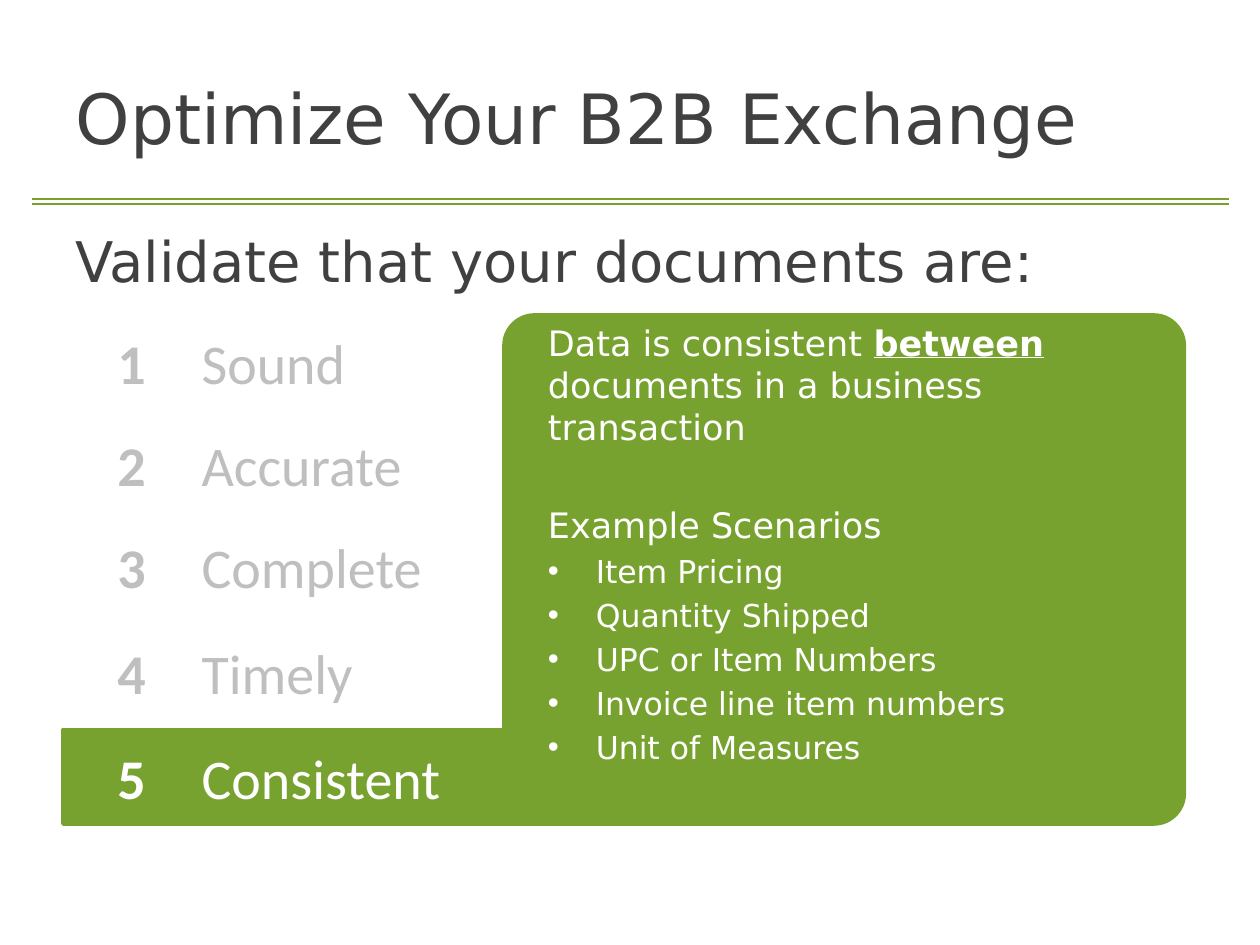
from dataclasses import dataclass
from lxml.etree import SubElement as Sub
from pptx import Presentation
from pptx.dml.color import RGBColor as RGB
from pptx.enum.shapes import MSO_CONNECTOR as Link, MSO_SHAPE as Kind
from pptx.enum.text import MSO_ANCHOR as Anchor, MSO_AUTO_SIZE as Fit, PP_ALIGN as Align
from pptx.oxml.ns import qn
from pptx.util import Inches, Pt


@dataclass(frozen=True)
class Theme:
    green: str = "78A22F"
    dark: str = "404040"
    gray: str = "BFBFBF"
    white: str = "FFFFFF"
    sans: str = "DejaVu Sans"
    label: str = "Calibri"
    title: float = 39.6
    head: int = 32
    lead: int = 20
    item: int = 18


T = Theme()
ROWS = [
    (2.5, "Sound"),
    (3.31, "Accurate"),
    (4.12, "Complete"),
    (4.96, "Timely"),
    (5.79, "Consistent"),
]
ITEMS = [
    "Item Pricing",
    "Quantity Shipped",
    "UPC or Item Numbers",
    "Invoice line item numbers",
    "Unit of Measures",
]


def place(shape, box):
    shape.left, shape.top, shape.width, shape.height = map(Inches, box)


def frame(shape, anchor=Anchor.MIDDLE, left=0.1, right=0.1):
    text = shape.text_frame
    text.word_wrap = True
    text.auto_size = Fit.NONE
    text.vertical_anchor = anchor
    text.margin_left, text.margin_right = Inches(left), Inches(right)
    text.margin_top = text.margin_bottom = Inches(0.05)
    return text


def write(para, text, size=T.head, color=T.dark, font=T.sans, bold=False,
          under=False, align=Align.LEFT, before=0):
    para.alignment = align
    para.space_before = Pt(before)
    run = para.add_run()
    run.text = text
    face = run.font
    face.name, face.size = font, Pt(size)
    face.bold, face.underline = bold, under
    face.color.rgb = RGB.from_string(color)


def bullet(para, mark=None, indent=0):
    props = para._p.get_or_add_pPr()
    props.set("marL", str(Inches(indent)))
    props.set("indent", str(-Inches(indent)))
    if mark:
        Sub(props, qn("a:buFont"), typeface="Arial")
        Sub(props, qn("a:buChar"), char=mark)
    else:
        Sub(props, qn("a:buNone"))


def block(slide, kind, box, fill=None, line=None):
    shape = slide.shapes.add_shape(kind, *map(Inches, box))
    shape.shadow.inherit = False
    if fill:
        shape.fill.solid()
        shape.fill.fore_color.rgb = RGB.from_string(fill)
    else:
        shape.fill.background()
    if line:
        shape.line.color.rgb = RGB.from_string(line)
        shape.line.width = Pt(2)
    else:
        shape.line.fill.background()
    return shape


def rule(slide, y):
    line = slide.shapes.add_connector(
        Link.STRAIGHT, Inches(0.25), Inches(y), Inches(9.75), Inches(y))
    line.line.color.rgb = RGB.from_string(T.green)
    line.line.width = Pt(1.5)
    Sub(line._element.spPr, qn("a:effectLst"))


def heads(slide):
    title, body = slide.placeholders
    place(title, (0.5, 0.3, 9, 1.25))
    write(frame(title).paragraphs[0], "Optimize Your B2B Exchange", size=T.title)
    place(body, (0.5, 1.75, 9, 1.75))
    para = frame(body, Anchor.TOP).paragraphs[0]
    write(para, "Validate that your documents are:")
    bullet(para)


def row(slide, top, name, color):
    badge = block(slide, Kind.OVAL, (0.67, top, 0.75, 0.75))
    write(frame(badge, left=0, right=0).paragraphs[0],
          str([label for _, label in ROWS].index(name) + 1),
          color=color, font=T.label, bold=True, align=Align.CENTER)
    if color == T.gray:
        label = slide.shapes.add_textbox(*map(Inches, (0.5, top, 7.58, 0.75)))
        tag(label, name, color)


def tag(shape, name, color):
    write(frame(shape, left=1.1).paragraphs[0], name, color=color, font=T.label)


def panel(slide):
    card = block(slide, Kind.ROUNDED_RECTANGLE, (4, 2.5, 5.4, 4.04), T.green, T.green)
    card.adjustments[0] = 0.06


def detail(slide):
    text = frame(block(slide, Kind.RECTANGLE, (4.25, 2.5, 4.92, 4.04), T.green), Anchor.TOP)
    style = dict(size=T.lead, color=T.white)
    lead = text.paragraphs[0]
    write(lead, "Data is consistent ", **style)
    write(lead, "between", bold=True, under=True, **style)
    write(lead, " documents in a business transaction", **style)
    write(text.add_paragraph(), "Example Scenarios", before=32, **style)
    for item in ITEMS:
        para = text.add_paragraph()
        write(para, item, size=T.item, color=T.white, before=3.6)
        bullet(para, "•", 0.38)


def main():
    deck = Presentation()
    deck.slide_width, deck.slide_height = Inches(10), Inches(7.5)
    slide = deck.slides.add_slide(deck.slide_layouts[1])
    heads(slide)
    for y in (1.58, 1.62):
        rule(slide, y)
    top, name = ROWS[-1]
    bar = block(slide, Kind.RECTANGLE, (0.5, top, 7.58, 0.75), T.green, T.green)
    tag(bar, name, T.white)
    panel(slide)
    detail(slide)
    for y, label in ROWS:
        row(slide, y, label, T.white if label == name else T.gray)
    deck.save("out.pptx")


if __name__ == "__main__":
    main()
